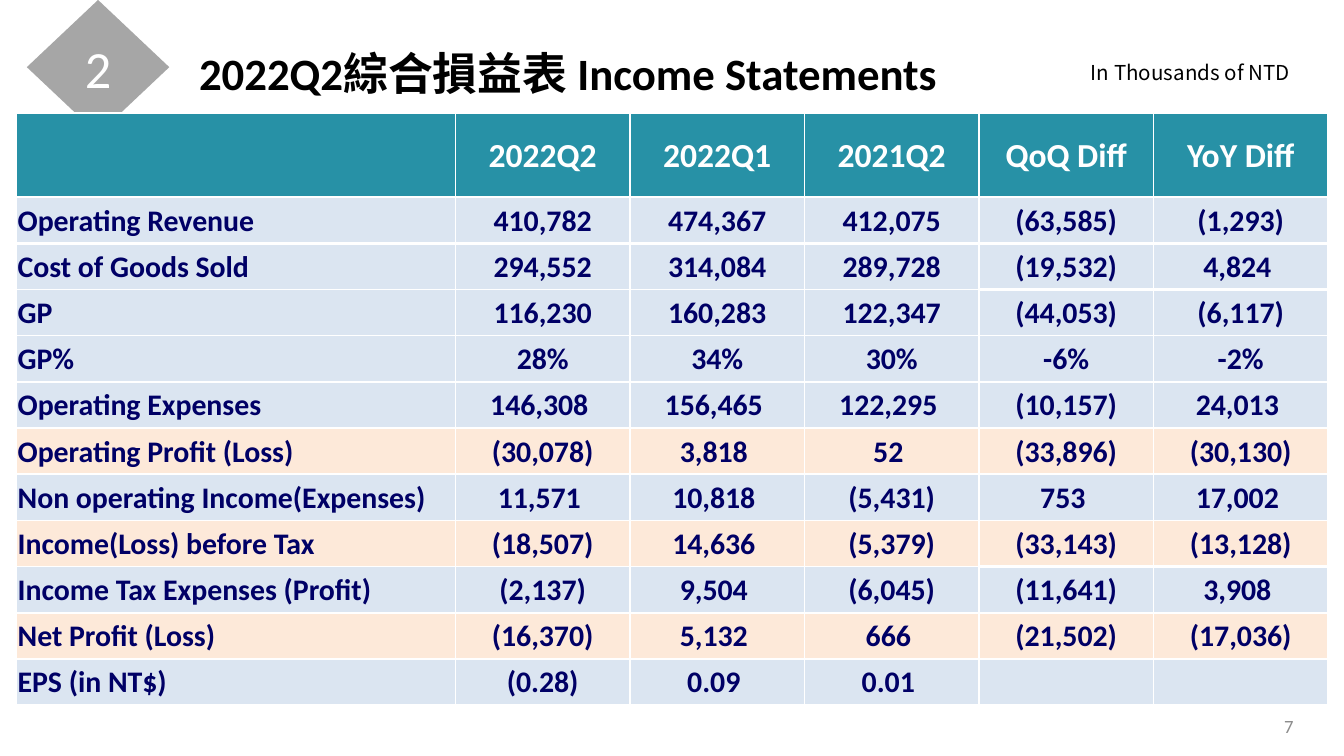
from dataclasses import dataclass

from lxml.etree import SubElement
from pptx import Presentation
from pptx.dml.color import RGBColor
from pptx.enum.shapes import MSO_SHAPE
from pptx.enum.text import MSO_ANCHOR, MSO_AUTO_SIZE, PP_ALIGN
from pptx.oxml.ns import qn
from pptx.util import Pt


@dataclass(frozen=True)
class Theme:
    """Colours, fonts and type sizes of the slide."""
    white: str = "FFFFFF"
    black: str = "000000"
    muted: str = "8C8C8C"
    badge: str = "A6A6A6"
    header: str = "2791A6"
    body: str = "DBE5F1"
    highlight: str = "FDE9D9"
    figures: str = "000066"
    latin: str = "Calibri"
    asian: str = "Noto Sans CJK SC"
    badge_size: float = 28
    title_size: float = 24
    header_size: float = 18
    body_size: float = 16
    unit_size: float = 11
    number_size: float = 10


THEME = Theme()
TITLE = [("2022Q2", THEME.latin), ("綜合損益表 ", THEME.asian), ("Income Statements", THEME.latin)]
HEADINGS = ["", "2022Q2", "2022Q1", "2021Q2", "QoQ Diff", "YoY Diff"]
STATEMENT = [
    ["Operating Revenue", "410,782", "474,367", "412,075", "(63,585)", "(1,293)"],
    ["Cost of Goods Sold", "294,552", "314,084", "289,728", "(19,532)", "4,824 "],
    ["GP", "116,230", "160,283", "122,347", "(44,053)", "(6,117)"],
    ["GP%", "28%", "34%", "30%", "-6%", "-2%"],
    ["Operating Expenses", "146,308 ", "156,465 ", "122,295 ", "(10,157)", "24,013 "],
    ["Operating Profit (Loss)", "(30,078)", "3,818 ", "52 ", "(33,896)", "(30,130)"],
    ["Non operating Income(Expenses)", "11,571 ", "10,818 ", "(5,431)", "753 ", "17,002 "],
    ["Income(Loss) before Tax", "(18,507)", "14,636 ", "(5,379)", "(33,143)", "(13,128)"],
    ["Income Tax Expenses (Profit)", "(2,137)", "9,504 ", "(6,045)", "(11,641)", "3,908 "],
    ["Net Profit (Loss)", "(16,370)", "5,132 ", "666 ", "(21,502)", "(17,036)"],
    ["EPS (in NT$)", "(0.28)", "0.09 ", "0.01 ", "", ""],
]
PROFIT_ROWS = {"Operating Profit (Loss)", "Income(Loss) before Tax", "Net Profit (Loss)"}
DIFF_COLUMNS = {4, 5}
HEAVY_DIFF_ROWS = {2, 4, 6, 8}


def apply_format(target, values):
    """Set each named attribute of the target."""
    for name, value in values.items():
        setattr(target, name, value)


def add_span(para, text, size, color, font=THEME.latin, bold=False):
    """Append a formatted run to a paragraph."""
    span = para.add_run()
    span.text = text
    apply_format(span.font, {"size": Pt(size), "name": font, "bold": bold})
    span.font.color.rgb = RGBColor.from_string(color)
    if font == THEME.asian:
        SubElement(span.font._element, qn("a:ea"), typeface=font)


def place(shape, box):
    """Move a shape to a box given in points."""
    names = ("left", "top", "width", "height")
    apply_format(shape, dict(zip(names, map(Pt, box))))


def add_label(page, box, text, size, color, font=THEME.latin,
              align=PP_ALIGN.LEFT, anchor=MSO_ANCHOR.TOP):
    """Add a single-line text box."""
    label = page.shapes.add_textbox(*map(Pt, box))
    apply_format(label.text_frame, {"word_wrap": True, "vertical_anchor": anchor})
    para = label.text_frame.paragraphs[0]
    para.alignment = align
    add_span(para, text, size, color, font)


def add_badge(page, box, text):
    """Add the section number in a diamond."""
    badge = page.shapes.add_shape(MSO_SHAPE.DIAMOND, *map(Pt, box))
    badge.shadow.inherit = False
    badge.fill.solid()
    badge.fill.fore_color.rgb = RGBColor.from_string(THEME.badge)
    badge.line.fill.background()
    badge.text_frame.vertical_anchor = MSO_ANCHOR.MIDDLE
    para = badge.text_frame.paragraphs[0]
    para.alignment = PP_ALIGN.CENTER
    add_span(para, text, THEME.badge_size, THEME.white)


def fill_title(page, box):
    """Place and fill the title placeholder."""
    title = page.shapes.title
    place(title, box)
    apply_format(title.text_frame, {
        "word_wrap": True,
        "auto_size": MSO_AUTO_SIZE.NONE,
        "vertical_anchor": MSO_ANCHOR.TOP,
    })
    para = title.text_frame.paragraphs[0]
    para.alignment = PP_ALIGN.LEFT
    for text, font in TITLE:
        add_span(para, text, THEME.title_size, THEME.black, font, True)


def border_width(row, column):
    """Return the width of the rule below a cell."""
    heavy = row in (0, 1) or (column in DIFF_COLUMNS and row in HEAVY_DIFF_ROWS)
    return 1.5 if heavy else 1


def set_borders(cell, row, column):
    """Draw white rules on all four sides of a cell."""
    widths = {"L": 1, "R": 1, "T": border_width(row - 1, column), "B": border_width(row, column)}
    properties = cell._tc.get_or_add_tcPr()
    for index, (side, width) in enumerate(widths.items()):
        line = properties.makeelement(qn(f"a:ln{side}"), {"w": str(Pt(width))})
        fill = SubElement(line, qn("a:solidFill"))
        SubElement(fill, qn("a:srgbClr"), val=THEME.white)
        properties.insert(index, line)


def format_cell(cell, text, row, column, fill):
    """Fill one cell with its text, colour and rules."""
    apply_format(cell, {
        "margin_left": Pt(0.7), "margin_right": Pt(0.7),
        "margin_top": Pt(0.7), "margin_bottom": Pt(0),
        "vertical_anchor": MSO_ANCHOR.MIDDLE,
    })
    cell.fill.solid()
    cell.fill.fore_color.rgb = RGBColor.from_string(fill)
    set_borders(cell, row, column)
    if text:
        para = cell.text_frame.paragraphs[0]
        para.alignment = PP_ALIGN.CENTER if column else PP_ALIGN.LEFT
        size, color = ((THEME.body_size, THEME.figures) if row
                       else (THEME.header_size, THEME.white))
        add_span(para, text, size, color, bold=True)


def add_statement(page, box, label_width=235.2, header_height=45):
    """Add the income statement table."""
    rows = [HEADINGS] + STATEMENT
    table = page.shapes.add_table(len(rows), len(HEADINGS), *map(Pt, box)).table
    value_width = (box[2] - label_width) / (len(HEADINGS) - 1)
    row_height = (box[3] - header_height) / len(STATEMENT)
    for index, column in enumerate(table.columns):
        column.width = Pt(value_width if index else label_width)
    for row, texts in enumerate(rows):
        table.rows[row].height = Pt(row_height if row else header_height)
        body = THEME.highlight if texts[0] in PROFIT_ROWS else THEME.body
        for column, text in enumerate(texts):
            format_cell(table.cell(row, column), text, row, column, body if row else THEME.header)


def main():
    """Build and save the deck."""
    deck = Presentation()
    apply_format(deck, {"slide_width": Pt(720), "slide_height": Pt(405)})
    page = deck.slides.add_slide(deck.slide_layouts[5])
    add_label(page, (532, 378, 168, 21.6), "7", THEME.number_size, THEME.muted,
              align=PP_ALIGN.RIGHT, anchor=MSO_ANCHOR.MIDDLE)
    add_badge(page, (14.4, 0, 76.3, 72), "2")
    fill_title(page, (99.4, 20.9, 572.4, 38.2))
    add_statement(page, (8.8, 60.6, 702.7, 317.25))
    add_label(page, (577.4, 28.8, 129.6, 20.9), "In Thousands of NTD",
              THEME.unit_size, THEME.black, THEME.asian)
    deck.save("out.pptx")


if __name__ == "__main__":
    main()
